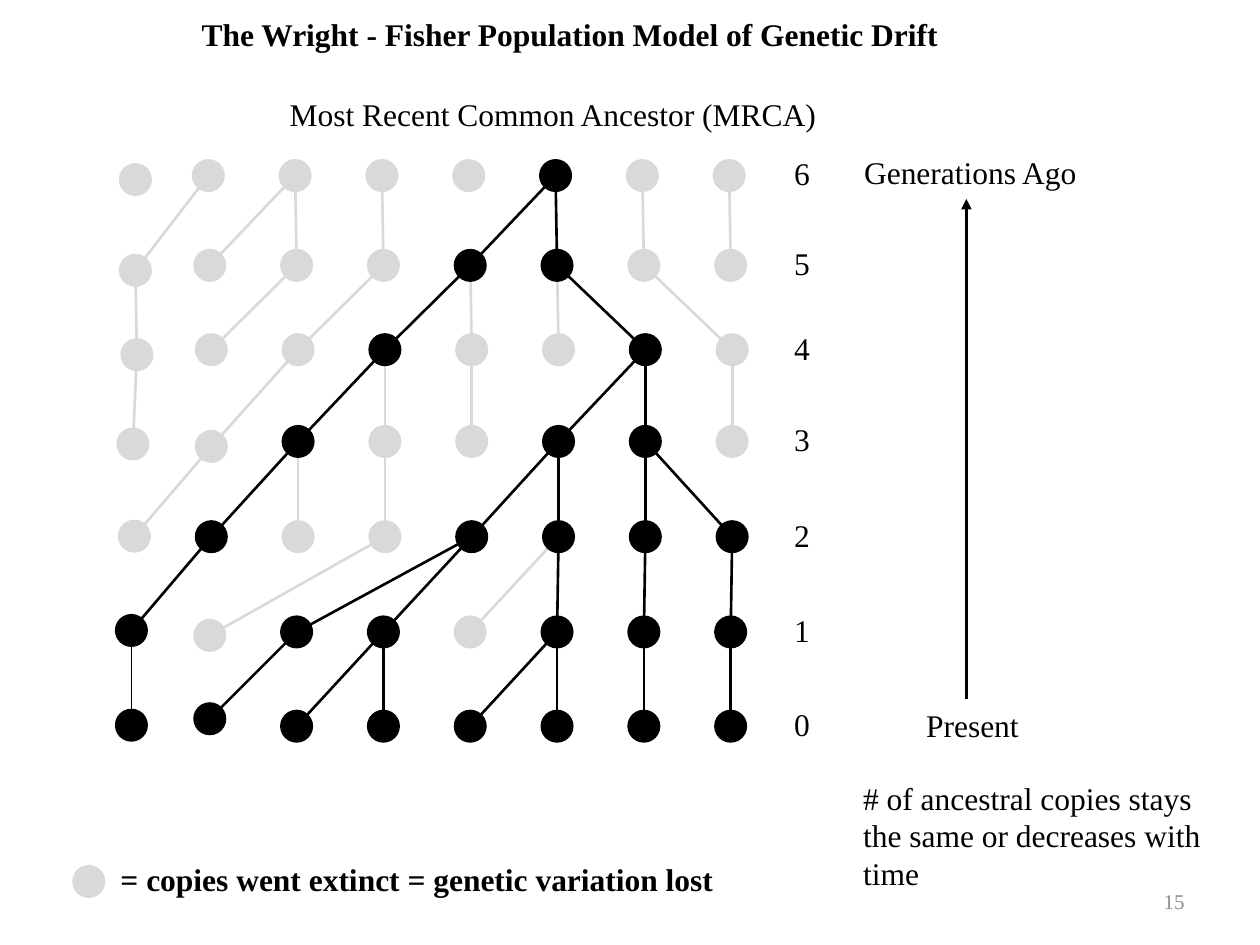
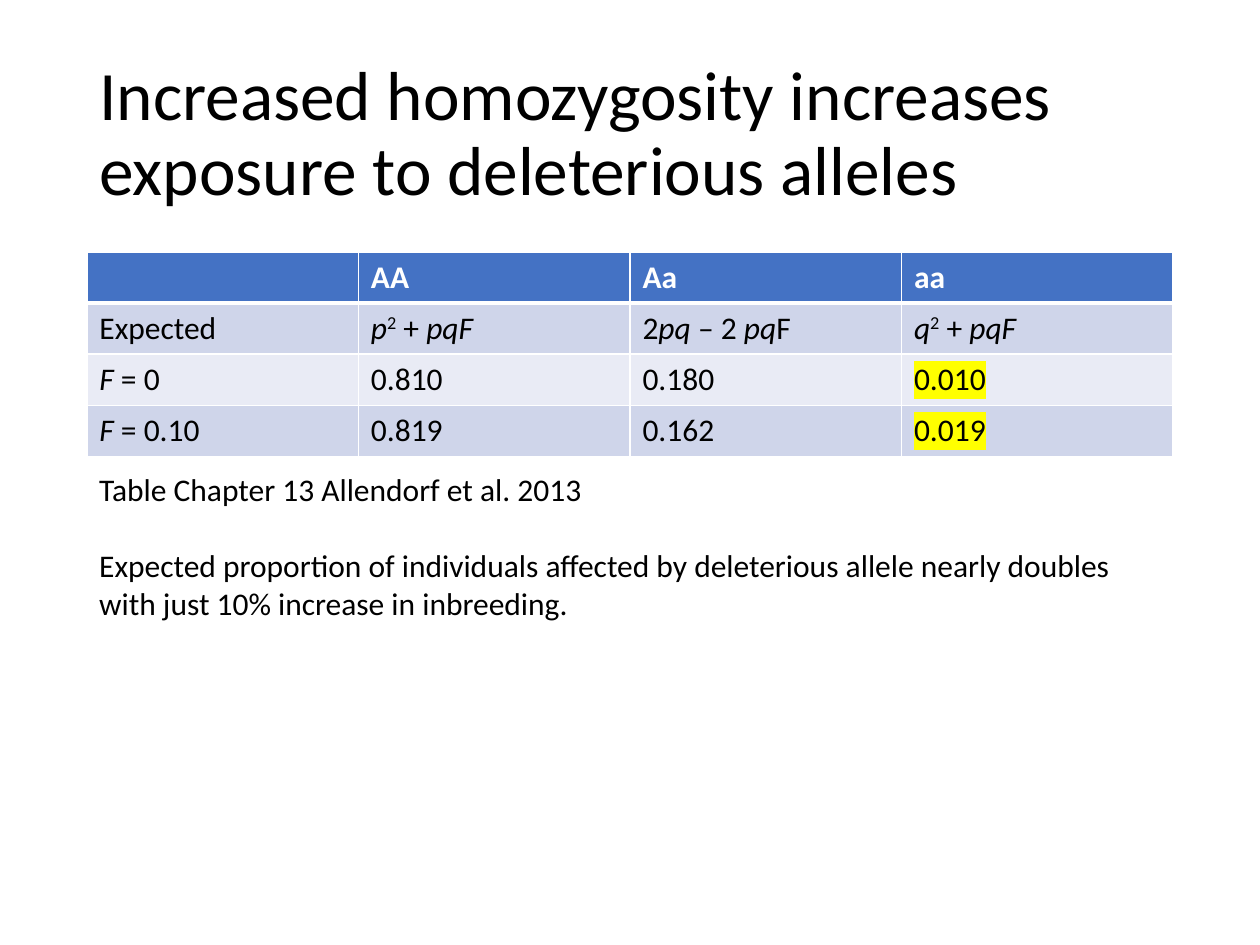
from lxml import etree
from pptx import Presentation
from pptx.dml.color import RGBColor
from pptx.enum.shapes import MSO_CONNECTOR, MSO_SHAPE
from pptx.enum.text import MSO_ANCHOR, MSO_AUTO_SIZE, PP_ALIGN
from pptx.oxml.ns import qn
from pptx.util import Cm, Pt

BLACK = RGBColor(0x00, 0x00, 0x00)
WHITE = RGBColor(0xFF, 0xFF, 0xFF)
PALE = RGBColor(0xD9, 0xD9, 0xD9)
GREY = RGBColor(0x8C, 0x8C, 0x8C)
BLUE = RGBColor(0x44, 0x72, 0xC4)
BAND = RGBColor(0xCF, 0xD5, 0xEA)
LIGHT = RGBColor(0xE9, 0xEB, 0xF5)
YELLOW = RGBColor(0xFF, 0xFF, 0x00)

LEFT, RIGHT = PP_ALIGN.LEFT, PP_ALIGN.RIGHT
TOP, MIDDLE = MSO_ANCHOR.TOP, MSO_ANCHOR.MIDDLE
STRAIGHT, OVAL = MSO_CONNECTOR.STRAIGHT, MSO_SHAPE.OVAL
FIXED = MSO_AUTO_SIZE.NONE

SERIF = {"name": "Times New Roman", "size": Pt(18), "bold": False}
SANS = {"name": "Calibri", "size": Pt(18), "bold": False}
STRONG = {**SERIF, "bold": True}

# Gene copies: one row per generation, from 6 generations ago to the present
DOT = 0.64
PITCH = 1.75
ROW_Y = [3.54, 5.35, 7.05, 8.9, 10.82, 12.74, 14.64]
ROW_X = [4.2, 4.23, 4.26, 4.26, 4.26, 4.23, 4.23]  # centre of column 1
FIRST = [(2.73, 3.62), (2.73, 5.45), (2.76, 7.15), (2.68, 8.95),
         (2.71, 10.81), (2.65, 12.71), (2.65, 14.62)]  # column 0
SHIFT = {(3, 1): 0.1, (5, 1): 0.07, (6, 1): -0.15}
# Column of each copy's parent, one row per generation from 5 to 0
PARENTS = [[int(col) for col in row] for row in (
    "12235567", "02344556", "02334667", "12235566", "13445567", "02335567")]

CELLS = [
    ["", "AA", "Aa", "aa"],
    ["Expected",
     [("p", "i"), ("2", "^"), (" + ", ""), ("pqF", "i")],
     [("2", ""), ("pq ", "i"), ("– 2 ", ""), ("pq", "i"), ("F", "")],
     [("q", "i"), ("2", "^"), (" + ", ""), ("pqF", "i")]],
    [[("F", "i"), (" = 0", "")], "0.810", "0.180", [("0.010", "h")]],
    [[("F", "i"), (" = 0.10", "")], "0.819", "0.162", [("0.019", "h")]],
]
FILLS = [BLUE, BAND, LIGHT, BAND]


def style(font, form, color=BLACK):
    for key, val in form.items():
        setattr(font, key, val)
    font.color.rgb = color


def place(shape, x, y, w, h):
    for key, val in zip(("left", "top", "width", "height"), (x, y, w, h)):
        setattr(shape, key, Cm(val))


def add_title(deck, text, box, form, frame):
    """Add a title-only slide and set its title."""
    slide = deck.slides.add_slide(deck.slide_layouts[5])
    title = slide.shapes.title
    place(title, *box)
    body = title.text_frame
    body.text = text
    for key, val in {"auto_size": FIXED, **frame}.items():
        setattr(body, key, val)
    body.paragraphs[0].alignment = LEFT
    style(body.paragraphs[0].runs[0].font, form)
    return slide


def add_text(slide, lines, box, form=SERIF, wrap=False, color=BLACK,
             align=LEFT, anchor=TOP, gap=0):
    shape = slide.shapes.add_textbox(*map(Cm, box))
    body = shape.text_frame
    body.word_wrap, body.vertical_anchor = wrap, anchor
    for num, line in enumerate(lines):
        para = body.add_paragraph() if num else body.paragraphs[0]
        para.alignment = align
        if num:
            para.space_before = Pt(gap)
        run = para.add_run()
        run.text = line
        style(run.font, form, color)


def add_line(slide, start, end, color=BLACK, width=1.5, arrow=False):
    line = slide.shapes.add_connector(STRAIGHT, *map(Cm, (*start, *end)))
    line.line.color.rgb = color
    line.line.width = Pt(width)
    props = line._element.spPr
    etree.SubElement(props, qn("a:effectLst"))
    if arrow:
        etree.SubElement(props.find(qn("a:ln")), qn("a:tailEnd"), type="triangle")


def add_dot(slide, x, y, color):
    """Draw a copy centred at x, y."""
    dot = slide.shapes.add_shape(
        OVAL, *map(Cm, (x - DOT / 2, y - DOT / 2, DOT, DOT)))
    dot.shadow.inherit = False
    dot.fill.solid()
    dot.fill.fore_color.rgb = color
    dot.line.color.rgb = color
    dot.line.width = Pt(0.75)


def spot(row, col):
    """Centre of a copy."""
    if col == 0:
        return FIRST[row]
    return ROW_X[row] + PITCH * (col - 1), ROW_Y[row] + SHIFT.get((row, col), 0)


def find_kept():
    """For each generation, the columns that have descendants at present."""
    kept = [set(range(8))]
    for row in reversed(PARENTS):
        kept.insert(0, {row[col] for col in kept[0]})
    return kept


def draw_tree(slide):
    kept = find_kept()
    shade = lambda row, col: BLACK if col in kept[row] else PALE
    links = [(row, col, old) for row, olds in enumerate(PARENTS, 1)
             for col, old in enumerate(olds)]
    for row, col, old in sorted(links, key=lambda link: link[1] in kept[link[0]]):
        thin = (row, col) == (6, 0)
        add_line(slide, spot(row - 1, old), spot(row, col), shade(row, col),
                 0.5 if thin else 1.5)
    for row, mid in enumerate(ROW_Y):
        for col in range(8):
            add_dot(slide, *spot(row, col), shade(row, col))
        add_text(slide, [str(6 - row)], (15.76, mid - 0.55, 0.86, 1.02))


def add_borders(cell, base):
    props = cell._tc.get_or_add_tcPr()
    for side in "LRTB":
        width = Pt(base if side == "B" else 1)
        edge = etree.SubElement(props, qn("a:ln" + side), w=str(width))
        fill = etree.SubElement(edge, qn("a:solidFill"))
        etree.SubElement(fill, qn("a:srgbClr"), val=str(WHITE))


def add_run(para, text, mark, form, color):
    """Add a run; mark is i for italic, ^ for superscript, h for highlight."""
    run = para.add_run()
    run.text = text
    style(run.font, {**form, "italic": mark == "i"}, color)
    props = run.font._element
    if mark == "^":
        props.set("baseline", "30000")
    if mark == "h":
        light = etree.Element(qn("a:highlight"))
        etree.SubElement(light, qn("a:srgbClr"), val=str(YELLOW))
        props.find(qn("a:solidFill")).addnext(light)


def add_grid(slide, box):
    grid = slide.shapes.add_table(len(CELLS), len(CELLS[0]), *map(Cm, box)).table
    for row, items in enumerate(CELLS):
        head = row == 0
        for col, item in enumerate(items):
            cell = grid.cell(row, col)
            add_borders(cell, 3 if head else 1)
            cell.fill.solid()
            cell.fill.fore_color.rgb = FILLS[row]
            runs = [(item, "")] if isinstance(item, str) else item
            for text, mark in runs:
                if text:
                    add_run(cell.text_frame.paragraphs[0], text, mark,
                            {**SANS, "bold": head}, WHITE if head else BLACK)


def draw_drift(deck):
    slide = add_title(deck, "The Wright - Fisher Population Model of Genetic Drift",
                      (3.81, 0.18, 15.52, 1.02), STRONG,
                      {"word_wrap": False, "vertical_anchor": TOP})
    draw_tree(slide)
    add_text(slide, ["Most Recent Common Ancestor (MRCA)"], (5.59, 1.8, 11.23, 1.02))
    add_text(slide, ["Generations Ago"], (17.17, 2.97, 4.85, 1.02))
    add_line(slide, (19.48, 14.1), (19.48, 4.01), width=2, arrow=True)
    add_text(slide, ["Present"], (18.42, 14.1, 2.41, 1.02))
    add_text(slide, ["# of ancestral copies stays the same or decreases with time"],
             (17.15, 15.57, 7.42, 2.57), wrap=True)
    add_dot(slide, 1.79, 17.77, PALE)
    add_text(slide, ["= copies went extinct = genetic variation lost"],
             (2.18, 17.22, 12.6, 1.02), STRONG)
    add_text(slide, ["15"], (18.21, 17.65, 5.92, 1.02), {**SERIF, "size": Pt(12)},
             wrap=True, color=GREY, align=RIGHT, anchor=MIDDLE)


def draw_alleles(deck):
    slide = add_title(
        deck, "Increased homozygosity increases exposure to deleterious alleles",
        (1.75, 1.02, 21.9, 3.68), {**SANS, "size": Pt(39.6)},
        {"word_wrap": True, "vertical_anchor": MIDDLE, "margin_bottom": Cm(0.38)})
    slide.shapes.title.text_frame.paragraphs[0].line_spacing = 0.9
    add_grid(slide, (1.75, 5.08, 21.9, 4.12))
    add_text(slide, ["Table Chapter 13 Allendorf et al. 2013",
                     "Expected proportion of individuals affected by deleterious "
                     "allele nearly doubles with just 10% increase in inbreeding."],
             (1.75, 9.35, 21.9, 4.88), SANS, wrap=True, gap=22)


def main():
    deck = Presentation()
    deck.slide_width, deck.slide_height = Cm(25.4), Cm(19.05)
    draw_drift(deck)
    draw_alleles(deck)
    deck.save("out.pptx")


if __name__ == "__main__":
    main()
